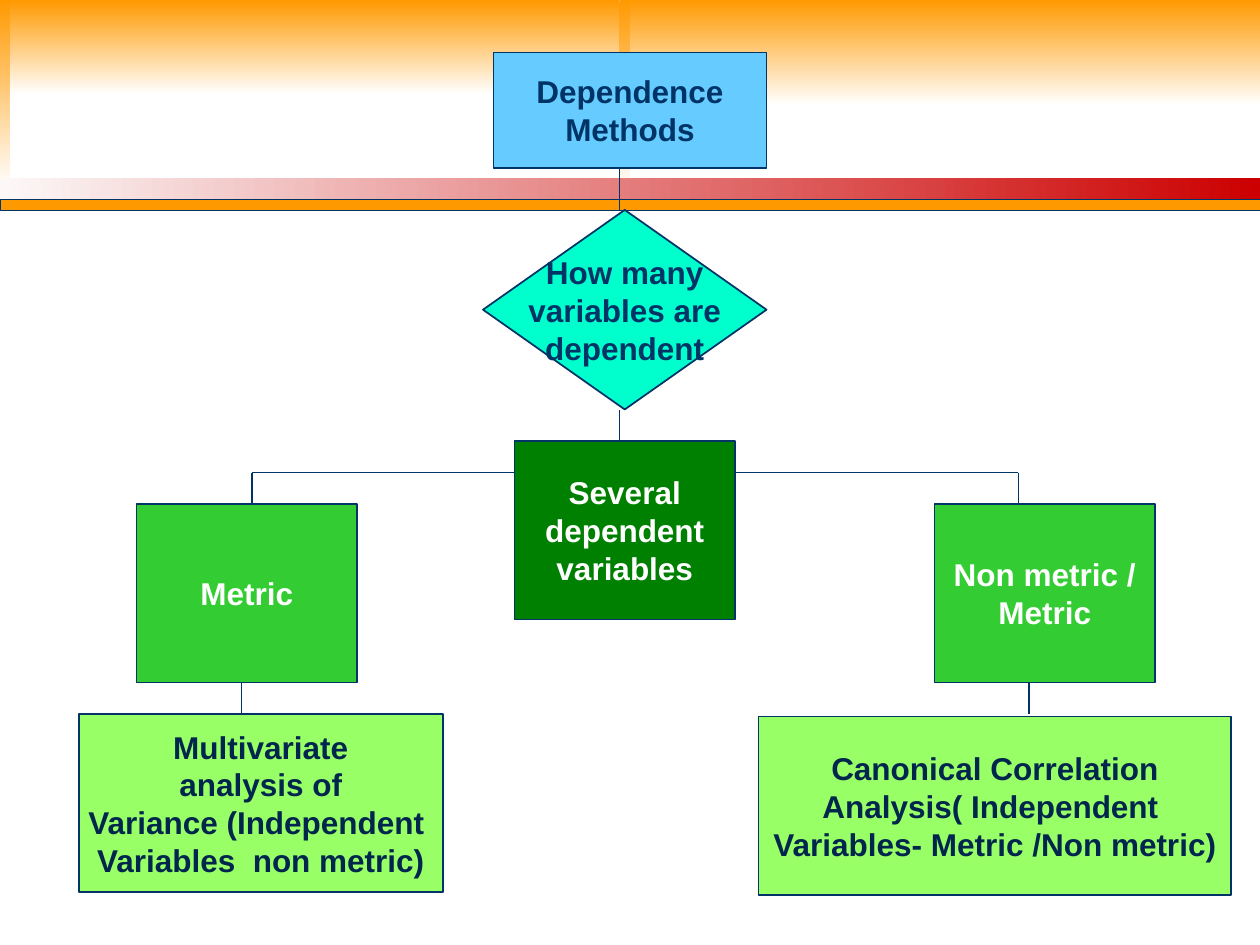
from typing import NamedTuple

from pptx import Presentation
from pptx.dml.color import RGBColor as Rgb
from pptx.enum.shapes import MSO_CONNECTOR as Conn, MSO_SHAPE as Kind
from pptx.enum.text import MSO_ANCHOR as Anchor, PP_ALIGN as Align
from pptx.oxml import parse_xml
from pptx.oxml.ns import nsdecls
from pptx.util import Pt

NAVY, INK, WHITE = "003366", "00264D", "FFFFFF"
ORANGE, GREEN, LIME = "FF9900", "33CC33", "99FF66"
FONT = {"name": "Arial", "size": Pt(18), "bold": True}
FRAME = {"word_wrap": False, "vertical_anchor": Anchor.MIDDLE}
DOWN, RIGHT = 270, 0


class Band(NamedTuple):
    left: float
    top: float
    width: float
    height: float
    start: str = ORANGE
    end: str = WHITE
    angle: int = DOWN


class Box(NamedTuple):
    left: float
    top: float
    width: float
    height: float
    fill: str
    ink: str
    text: str
    kind: Kind = Kind.RECTANGLE


class Line(NamedTuple):
    x1: float
    y1: float
    x2: float
    y2: float


BANDS = [
    Band(0, 0, 354, 54),
    Band(354, 0, 6, 108),
    Band(0, 0, 6, 108),
    Band(0, 102, 720, 12, "FCF8F8", "CC0000", RIGHT),
    Band(360, 0, 360, 60),
]
BOXES = [
    Box(282, 30, 156, 66, "66CCFF", NAVY, "Dependence\nMethods"),
    Box(276, 120, 162, 114, "00FFCC", NAVY,
        "How many\nvariables are\ndependent", Kind.DIAMOND),
    Box(534, 288, 126, 102, GREEN, WHITE, "Non metric /\nMetric"),
    Box(78, 288, 126, 102, GREEN, WHITE, "Metric"),
    Box(433.5, 409.5, 270, 102, LIME, INK,
        "Canonical Correlation\nAnalysis( Independent \n"
        "Variables- Metric /Non metric)"),
    Box(45, 408, 208, 102, LIME, INK,
        "Multivariate\nanalysis of\nVariance (Independent \n"
        "Variables  non metric)"),
    Box(294, 252, 126, 102, "008000", WHITE,
        "Several\ndependent\nvariables"),
]
LINES = [
    Line(354, 120, 354, 96),
    Line(354, 234, 354, 252),
    Line(294, 270, 144, 270),
    Line(582, 270, 420, 270),
    Line(144, 270, 144, 288),
    Line(582, 270, 582, 288),
    Line(138, 390, 138, 408),
    Line(588, 390, 588, 408),
]


def color(code: str) -> Rgb:
    return Rgb.from_string(code)


def style(item, values: dict) -> None:
    for key, value in values.items():
        setattr(item, key, value)


def stroke(item, width: float = 1) -> None:
    item.line.color.rgb = color(NAVY)
    item.line.width = Pt(width)


def place(slide, kind: Kind, *rect: float):
    """Add a shadowless shape; rect is left, top, width, height in points."""
    shape = slide.shapes.add_shape(kind, *map(Pt, rect))
    shape.shadow.inherit = False
    return shape


def draw_band(slide, band: Band) -> None:
    shape = place(slide, Kind.RECTANGLE, *band[:4])
    shape.line.fill.background()
    shape.fill.gradient()
    shape.fill.gradient_angle = band.angle
    for stop, code in zip(shape.fill.gradient_stops, (band.start, band.end)):
        stop.color.rgb = color(code)


def draw_rule(slide) -> None:
    """Draw the thin orange bar below the header."""
    rule = place(slide, Kind.RECTANGLE, 0, 114, 720, 6)
    rule.fill.solid()
    rule.fill.fore_color.rgb = color(ORANGE)
    stroke(rule, 0.25)


def draw_box(slide, box: Box) -> None:
    shape = place(slide, box.kind, *box[:4])
    shape.fill.solid()
    shape.fill.fore_color.rgb = color(box.fill)
    stroke(shape)
    frame = shape.text_frame
    style(frame, FRAME)
    frame.text = box.text
    for para in frame.paragraphs:
        para.alignment = Align.CENTER
        for run in para.runs:
            style(run.font, FONT)
            run.font.color.rgb = color(box.ink)


def draw_line(slide, line: Line) -> None:
    link = slide.shapes.add_connector(Conn.STRAIGHT, *map(Pt, line))
    stroke(link)
    link._element.spPr.append(parse_xml(f"<a:effectLst {nsdecls('a')}/>"))


def main() -> None:
    deck = Presentation()
    style(deck, {"slide_width": Pt(720), "slide_height": Pt(540)})
    slide = deck.slides.add_slide(deck.slide_layouts[6])
    draw_rule(slide)
    for band in BANDS:
        draw_band(slide, band)
    for box in BOXES:
        draw_box(slide, box)
    for line in LINES:
        draw_line(slide, line)
    deck.save("out.pptx")


if __name__ == "__main__":
    main()
